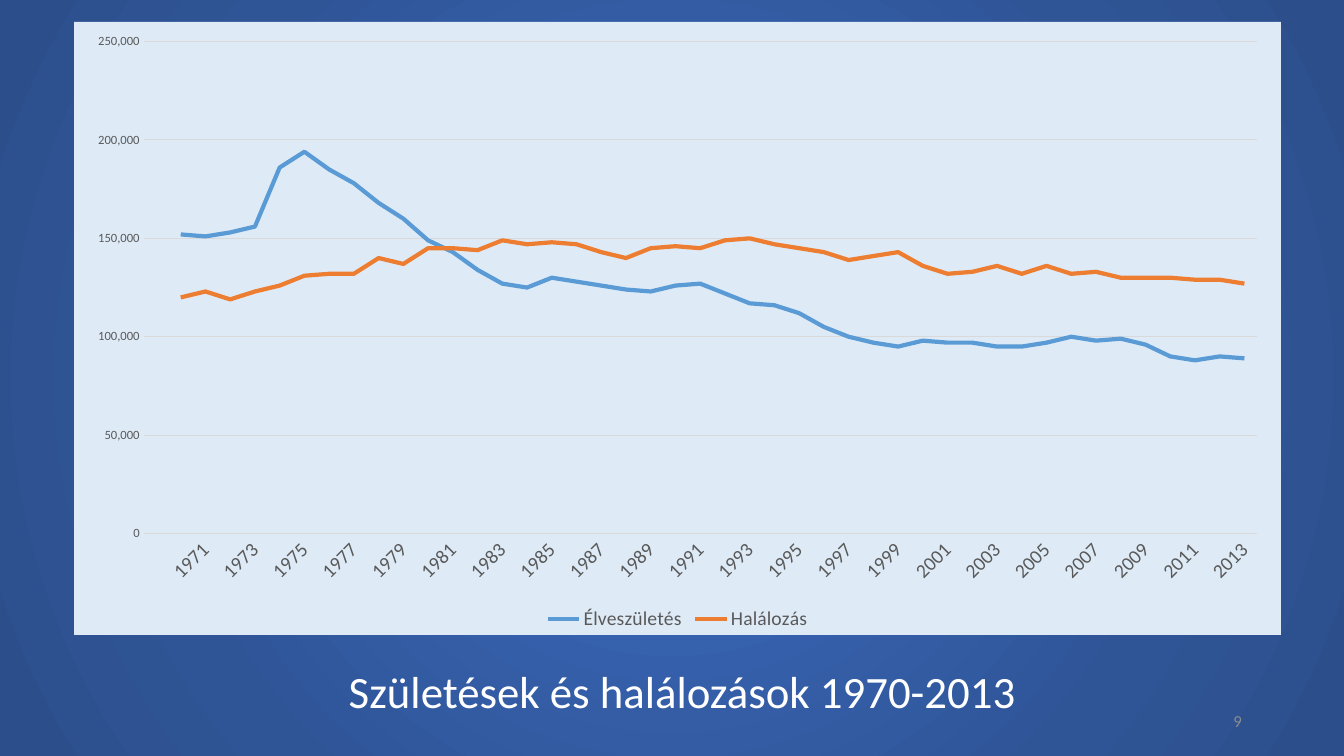
from lxml import etree
from pptx import Presentation
from pptx import util as u
from pptx.chart import data as cd
from pptx.dml.color import RGBColor
from pptx.enum import chart as ch, text as tx
from pptx.oxml import parse_xml
from pptx.oxml.ns import nsdecls, qn

WHITE = RGBColor(0xFF, 0xFF, 0xFF)
GREY = RGBColor(0x8C, 0x8C, 0x8C)
DARK = RGBColor(0x59, 0x59, 0x59)
GRID = RGBColor(0xD9, 0xD9, 0xD9)
PALE = RGBColor(0xDE, 0xEB, 0xF7)
BLUE = RGBColor(0x5B, 0x9B, 0xD5)
ORANGE = RGBColor(0xED, 0x7D, 0x31)
GLOW = [
    (0, RGBColor(0x38, 0x64, 0xB3)),
    (23, RGBColor(0x38, 0x64, 0xB3)),
    (69, RGBColor(0x2F, 0x55, 0x97)),
    (97, RGBColor(0x2C, 0x4F, 0x8C)),
]
FACE = "Calibri"
WIDE, HIGH = 1344, 756
SCALE = 914400 / 100.8

YEARS = range(1970, 2014)
# Thousands of people per year
BIRTHS = [152, 151, 153, 156, 186, 194, 185, 178, 168, 160, 149,
          143, 134, 127, 125, 130, 128, 126, 124, 123, 126, 127,
          122, 117, 116, 112, 105, 100, 97, 95, 98, 97, 97, 95,
          95, 97, 100, 98, 99, 96, 90, 88, 90, 89]
DEATHS = [120, 123, 119, 123, 126, 131, 132, 132, 140, 137, 145,
          145, 144, 149, 147, 148, 147, 143, 140, 145, 146, 145,
          149, 150, 147, 145, 143, 139, 141, 143, 136, 132, 133,
          136, 132, 136, 132, 133, 130, 130, 130, 129, 129, 127]
LINES = [("Élveszületés", BIRTHS, BLUE), ("Halálozás", DEATHS, ORANGE)]


def px(n):
    return u.Emu(round(n * SCALE))


def put(item, **attrs):
    for name, value in attrs.items():
        setattr(item, name, value)


def style(font, size, color):
    put(font, name=FACE, size=u.Pt(size))
    font.color.rgb = color


def stroke(line, color, width):
    line.color.rgb = color
    line.width = u.Pt(width)


def backdrop(slide):
    """Fill the background with a gradient spreading from the centre."""
    fill = slide.background.fill
    fill.gradient()
    grad = slide.element.find(".//" + qn("a:gradFill"))
    stops = "".join(
        f'<a:gs pos="{pos * 1000}"><a:srgbClr val="{color}"/></a:gs>'
        for pos, color in GLOW)
    grad.getparent().replace(grad, parse_xml(
        f'<a:gradFill {nsdecls("a")} rotWithShape="1">'
        f'<a:gsLst>{stops}</a:gsLst><a:path path="circle">'
        '<a:fillToRect l="50000" t="50000" r="50000" b="50000"/>'
        '</a:path></a:gradFill>'))


def graph(slide, box):
    data = cd.CategoryChartData(number_format="#,##0")
    data.categories = ["", *map(str, YEARS)]
    for name, counts, _ in LINES:
        data.add_series(name, [None, *(n * 1000 for n in counts)])
    chart = slide.shapes.add_chart(
        ch.XL_CHART_TYPE.LINE, *map(px, box), data).chart
    put(chart, has_title=False, has_legend=True)
    put(chart.font, name=FACE, size=u.Pt(10))
    put(chart.legend, position=ch.XL_LEGEND_POSITION.BOTTOM,
        include_in_layout=False)
    style(chart.legend.font, 14, DARK)

    plot = chart.plots[0]
    plot.vary_by_categories = False
    for series, (_, _, color) in zip(plot.series, LINES):
        series.smooth = False
        series.marker.style = ch.XL_MARKER_STYLE.NONE
        stroke(series.format.line, color, 3)

    years(chart.category_axis)
    counts_axis(chart.value_axis)
    chart.element.find(qn("c:chart")).addnext(parse_xml(
        f'<c:spPr {nsdecls("c", "a")}><a:solidFill><a:srgbClr val="{PALE}"/>'
        '</a:solidFill><a:ln><a:noFill/></a:ln></c:spPr>'))


def years(axis):
    """Slant the year labels and show every second one."""
    put(axis, major_tick_mark=ch.XL_TICK_MARK.NONE,
        minor_tick_mark=ch.XL_TICK_MARK.NONE, has_major_gridlines=False)
    style(axis.tick_labels.font, 14, DARK)
    stroke(axis.format.line, GRID, 0.75)
    node = axis.format.line._ln.getparent().getparent()
    node.find(".//" + qn("a:bodyPr")).set("rot", "-2700000")
    skip = etree.Element(qn("c:tickLblSkip"), val="2")
    node.find(qn("c:noMultiLvlLbl")).addprevious(skip)


def counts_axis(axis):
    put(axis, minimum_scale=0, maximum_scale=250000, major_unit=50000,
        major_tick_mark=ch.XL_TICK_MARK.NONE,
        minor_tick_mark=ch.XL_TICK_MARK.NONE, has_major_gridlines=True)
    put(axis.tick_labels, number_format="#,##0",
        number_format_is_linked=False)
    style(axis.tick_labels.font, 9, DARK)
    stroke(axis.major_gridlines.format.line, GRID, 0.75)
    axis.format.line.fill.background()


def label(shape, box, words, size, color, align, anchor):
    for side, n in zip(("left", "top", "width", "height"), box):
        setattr(shape, side, px(n))
    frame = shape.text_frame
    frame.text = words
    put(frame, word_wrap=True, vertical_anchor=anchor,
        auto_size=tx.MSO_AUTO_SIZE.NONE)
    para = frame.paragraphs[0]
    para.alignment = align
    style(para.runs[0].font, size, color)


def main():
    deck = Presentation()
    put(deck, slide_width=px(WIDE), slide_height=px(HIGH))
    slide = deck.slides.add_slide(deck.slide_layouts[5])
    backdrop(slide)
    label(slide.shapes.title, (112, 659, 1141, 65),
          "Születések és halálozások 1970-2013", 32, WHITE,
          tx.PP_ALIGN.CENTER, tx.MSO_ANCHOR.TOP)
    graph(slide, (74, 22, 1207, 613))
    label(slide.shapes.add_textbox(0, 0, 0, 0), (950, 701, 302, 40),
          "9", 12, GREY, tx.PP_ALIGN.RIGHT, tx.MSO_ANCHOR.MIDDLE)
    deck.save("out.pptx")


if __name__ == "__main__":
    main()
